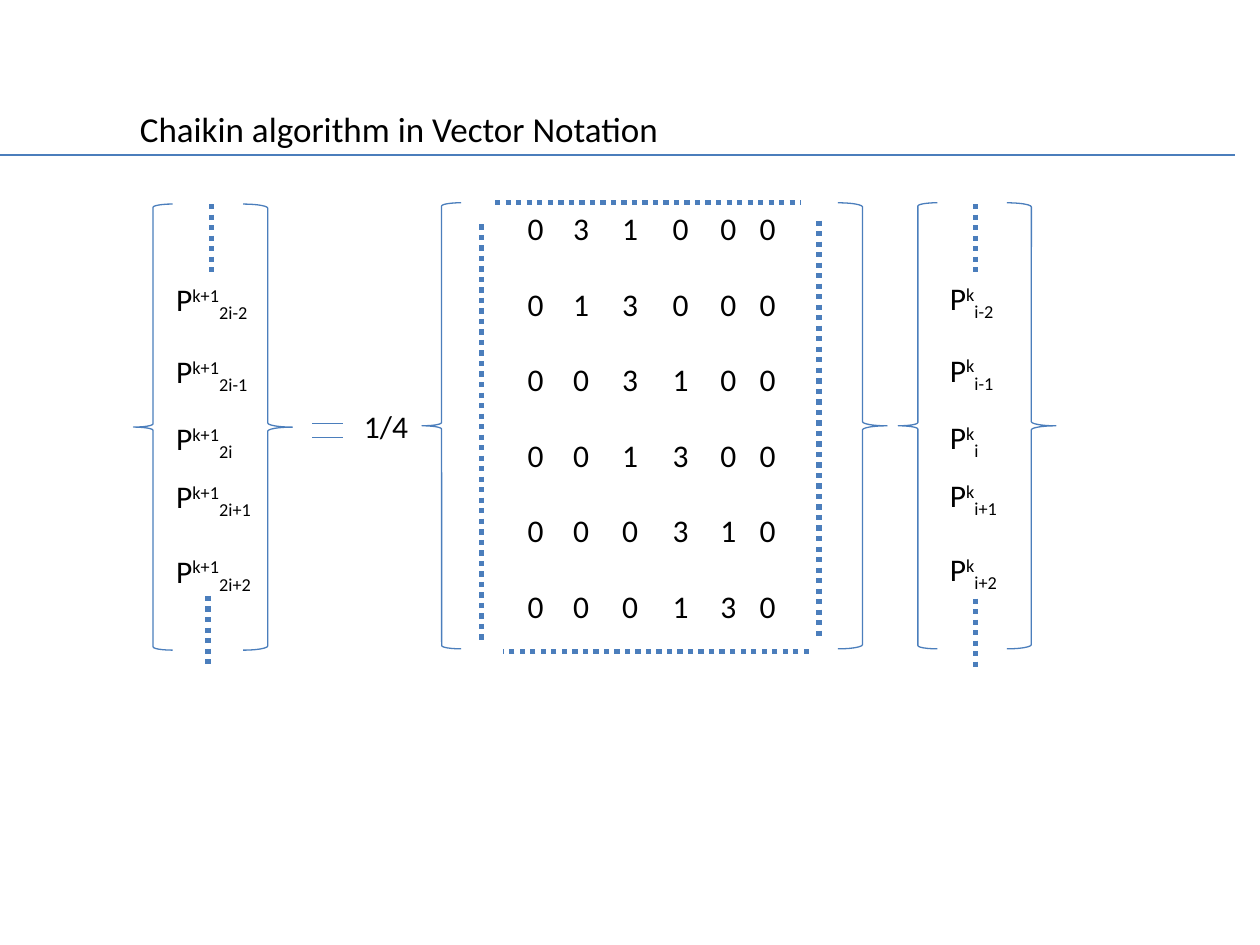
from pptx import Presentation
from pptx.dml.color import RGBColor
from pptx.enum.dml import MSO_LINE
from pptx.enum.shapes import MSO_CONNECTOR, MSO_SHAPE
from pptx.enum.text import MSO_ANCHOR, MSO_AUTO_SIZE, PP_ALIGN
from pptx.oxml.ns import qn
from pptx.util import Inches, Pt
from lxml.etree import SubElement

BLUE = RGBColor(0x4B, 0x7E, 0xBC)
BLACK = RGBColor(0x00, 0x00, 0x00)
FONT = "Calibri"
COLS, ROWS = 100, 75
CELL = Inches(0.1)
BRACE_ROWS = 35.4
SUPER, SUB = 30000, -25000

MATRIX = ["031000", "013000", "003100", "001300", "000310", "000130"]
MATRIX_LEFTS = [40.9, 44.5, 48.4, 52.4, 56.2, 59.3]
ENTRIES = [("-2", 5.55, 5.8), ("-1", 11.25, 5.8), ("", 16.6, 4.5),
           ("+1", 21.2, 6.2), ("+2", 27.1, 6.2)]


def grid(*cells):
    """Turn counts of grid cells into lengths."""
    return [round(n * CELL) for n in cells]


def add_run(p, text, size=18, baseline=None):
    """Add one run, raised or lowered if a baseline is given."""
    r = p.add_run()
    r.text = text
    r.font.name, r.font.size, r.font.color.rgb = FONT, Pt(size), BLACK
    if baseline is not None:
        r.font._element.set("baseline", str(baseline))


def format_frame(tf):
    """Keep text on one line, at the top left of its frame."""
    tf.word_wrap = False
    tf.auto_size = MSO_AUTO_SIZE.SHAPE_TO_FIT_TEXT
    tf.vertical_anchor = MSO_ANCHOR.TOP
    tf.paragraphs[0].alignment = PP_ALIGN.LEFT


def add_text(s, left, top, width, height=4):
    """Add an empty text box and return its frame."""
    tf = s.shapes.add_textbox(*grid(left, top, width, height)).text_frame
    format_frame(tf)
    return tf


def add_title(s, text):
    """Fill and place the title placeholder."""
    sp = s.shapes.title
    sp.left, sp.top, sp.width, sp.height = grid(10.1, 8, 43.6, 4.4)
    format_frame(sp.text_frame)
    add_run(sp.text_frame.paragraphs[0], text, 20)


def add_line(s, x1, y1, x2, y2, dotted=False):
    """Draw a thin solid line or a thick dotted one."""
    c = s.shapes.add_connector(MSO_CONNECTOR.STRAIGHT, *grid(x1, y1, x2, y2))
    c.line.color.rgb = BLUE
    c.line.width = Pt(3 if dotted else 0.75)
    if dotted:
        c.line.dash_style = MSO_LINE.ROUND_DOT
    SubElement(c._element.spPr, qn("a:effectLst"))


def add_braces(s, left, right, top):
    """Draw a left and a right brace of equal height."""
    for kind, x, width in ((MSO_SHAPE.LEFT_BRACE, left, 3.1),
                           (MSO_SHAPE.RIGHT_BRACE, right, 3.9)):
        sp = s.shapes.add_shape(kind, *grid(x, top, width, BRACE_ROWS))
        sp.shadow.inherit = False
        sp.fill.background()
        sp.line.color.rgb = BLUE
        sp.line.width = Pt(0.75)


def add_vector(s, left, top, level, index, extra):
    """Write the column of control points of one level."""
    for offset, row, width in ENTRIES:
        p = add_text(s, left, top + row, width + extra).paragraphs[0]
        add_run(p, "P")
        add_run(p, level, baseline=SUPER)
        add_run(p, index + offset, baseline=SUB)


def add_matrix(s):
    """Write the subdivision matrix column by column."""
    for left, column in zip(MATRIX_LEFTS, zip(*MATRIX)):
        tf = add_text(s, left, 16.1, 3.3, 34.3)
        for i, digit in enumerate(column):
            p = tf.add_paragraph() if i else tf.paragraphs[0]
            if i:
                p.space_before = Pt(21.6)
            add_run(p, digit)


def main():
    """Build and save the slide."""
    prs = Presentation()
    prs.slide_width, prs.slide_height = grid(COLS, ROWS)
    s = prs.slides.add_slide(prs.slide_layouts[5])
    add_title(s, "Chaikin algorithm in Vector Notation")
    add_line(s, 0, 12.3, 98, 12.3)

    for left, right, top in ((10.6, 19.3, 16.2), (33.5, 66.5, 16.1),
                             (71.3, 79.9, 16.1)):
        add_braces(s, left, right, top)
    add_vector(s, 13, 16.2, "k+1", "2i", 2.5)
    add_vector(s, 74.4, 16.1, "k", "i", 0)
    add_matrix(s)

    for y in (33.6, 34.7):
        add_line(s, 24.8, y, 27.2, y)
    add_run(add_text(s, 27.9, 31.8, 5.6).paragraphs[0], "1/4")

    for x, y1, y2 in ((16.8, 16.2, 21.8), (16.5, 47.3, 52.8),
                      (38.2, 17.8, 51), (65, 17.5, 50.7),
                      (77.4, 16.2, 21.7), (77.4, 47.5, 53.1)):
        add_line(s, x, y1, x, y2, dotted=True)
    for x1, x2, y in ((39.3, 63.6, 16.1), (64.2, 39.9, 51.7)):
        add_line(s, x1, y, x2, y, dotted=True)
    prs.save("out.pptx")


if __name__ == "__main__":
    main()
